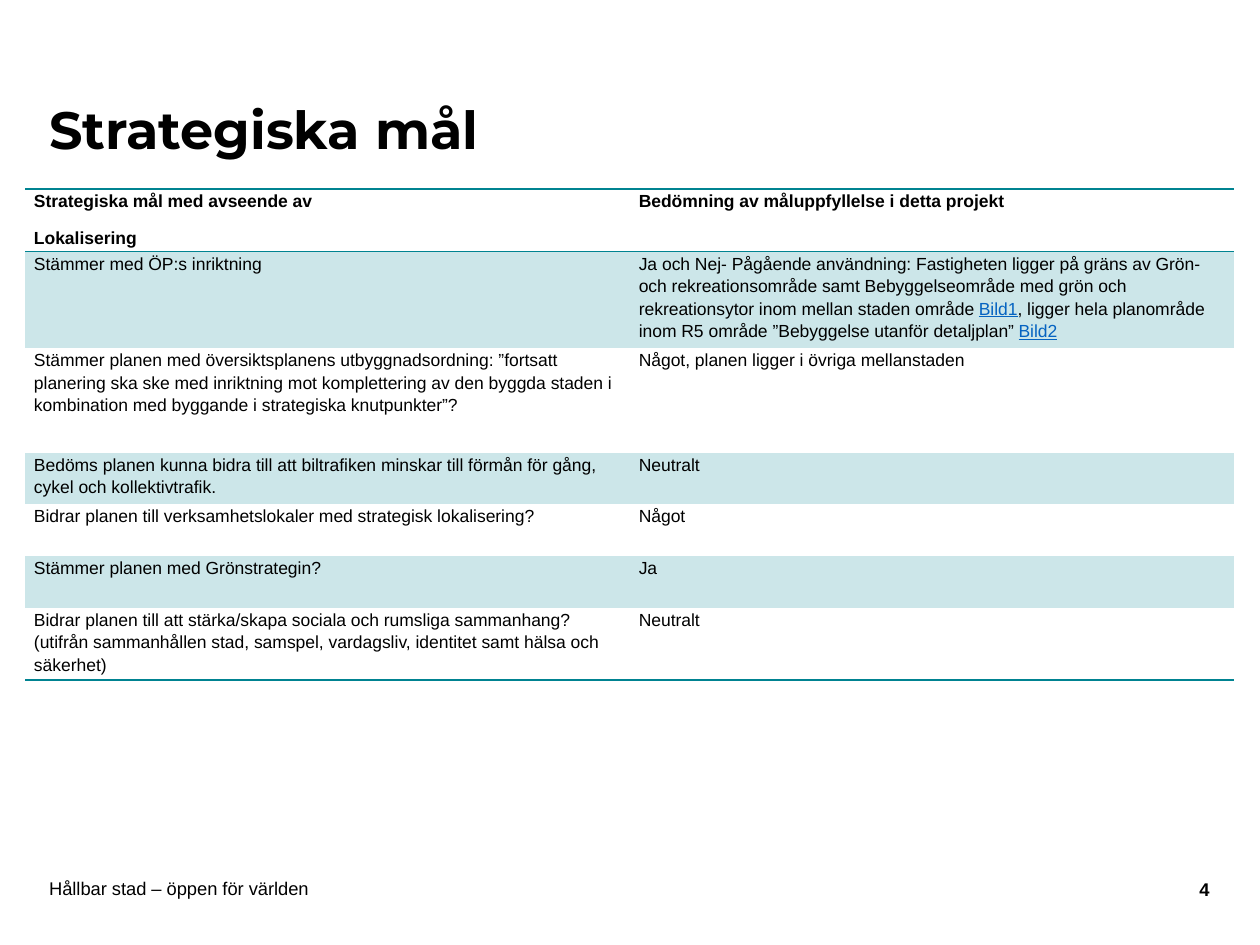
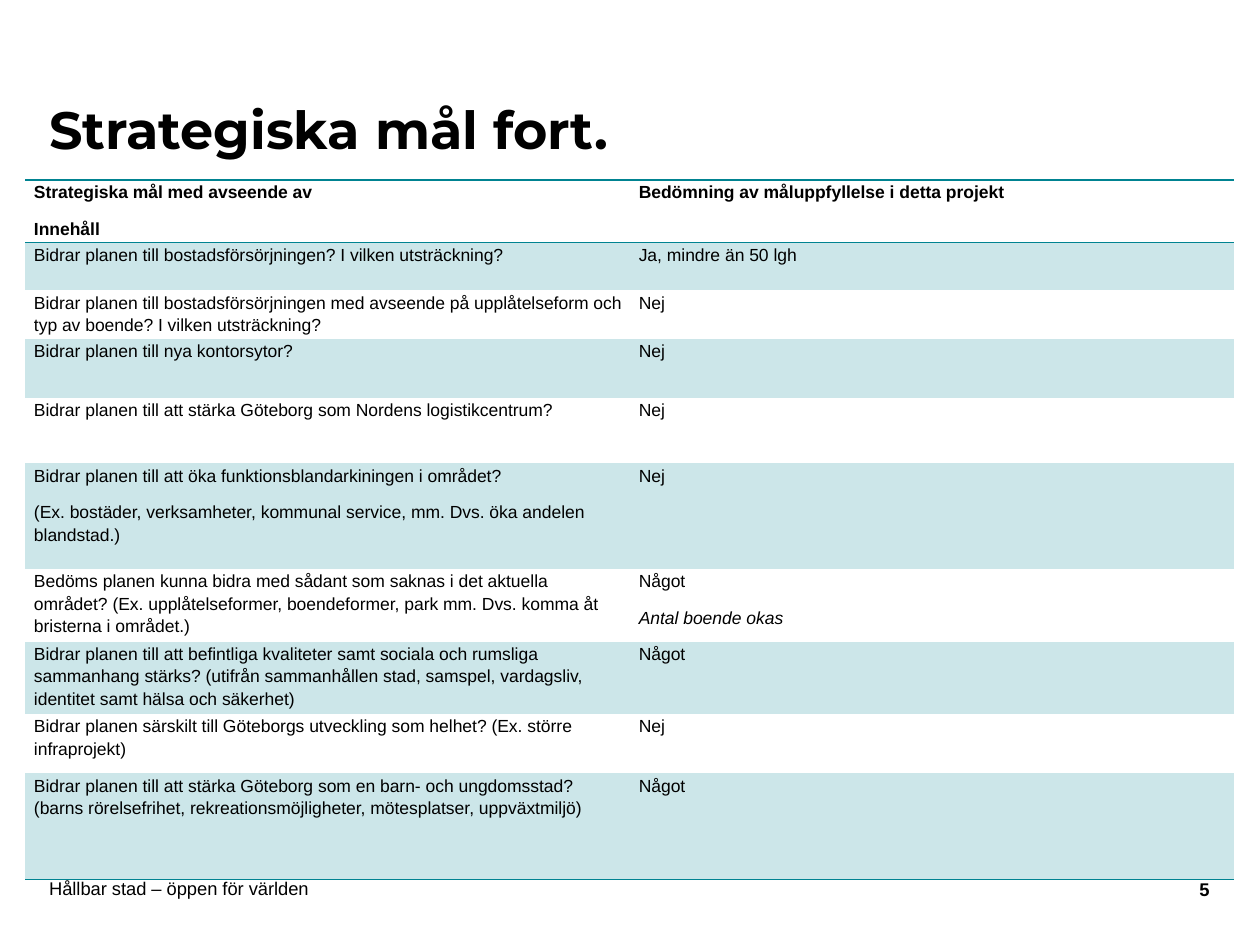
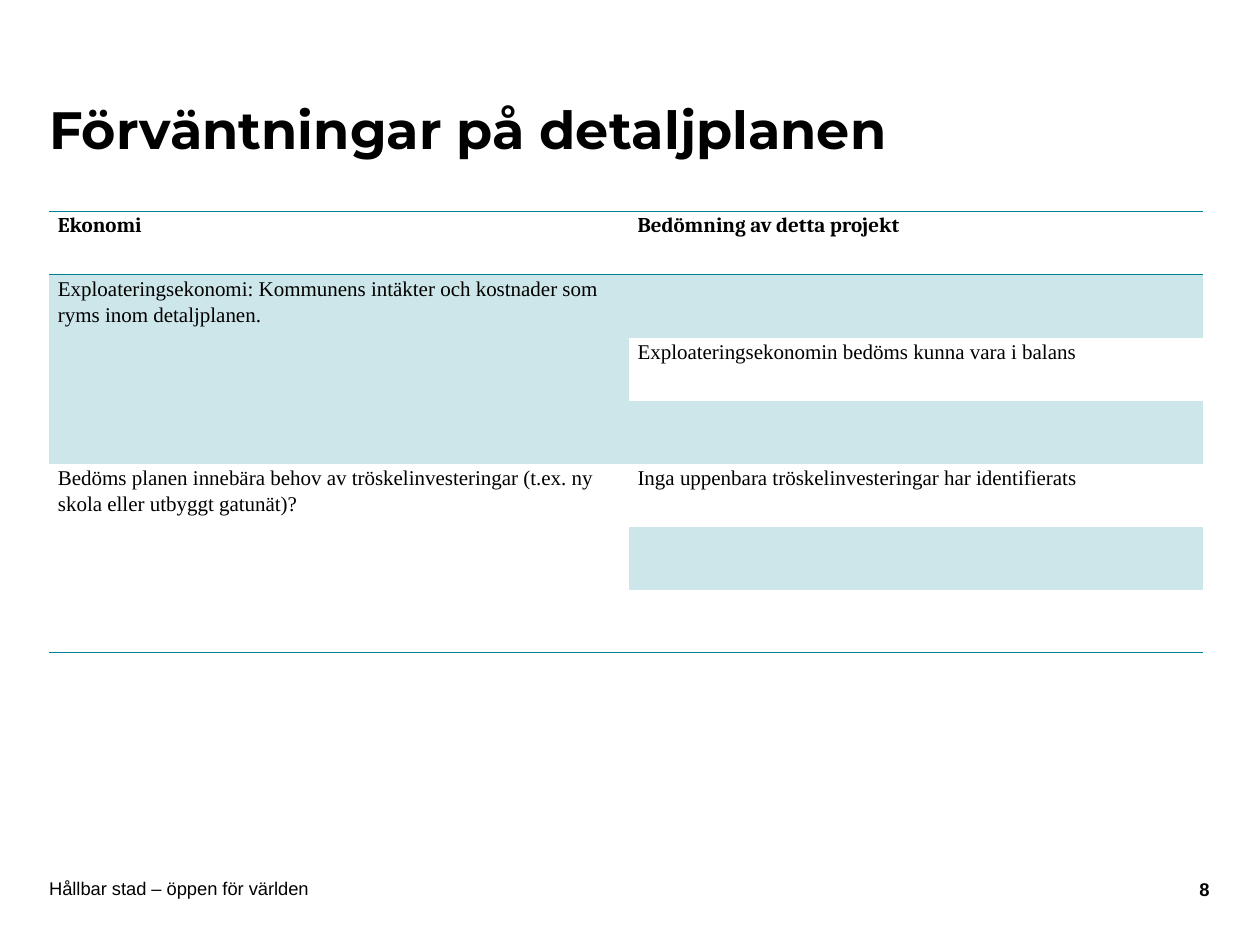
from lxml import etree
from pptx import Presentation
from pptx import util as u
from pptx.dml.color import RGBColor
from pptx.enum import text
from pptx.oxml import ns

BLACK = RGBColor(0, 0, 0)
TEAL = RGBColor(0x00, 0x83, 0x91)
PALE = RGBColor(0xCC, 0xE6, 0xE9)
BLUE = RGBColor(0x05, 0x63, 0xC1)
PLAIN = "{2D5ABB26-0587-4C30-8999-92F81FD0307C}"
MOTTO = "Hållbar stad – öppen för världen"
HEAD = "Bedömning av måluppfyllelse i detta projekt"
GOALS = {"face": "Arial", "bold": "Arial", "size": 10, "lead": 1.15, "after": 8}
COSTS = {"face": "Times New Roman", "bold": "Cambria", "size": 12,
         "lead": u.Pt(15), "after": 6}

PLACE = [
    ("Strategiska mål med avseende av\nLokalisering", HEAD),
    ("Stämmer med ÖP:s inriktning",
     "Ja och Nej- Pågående användning: Fastigheten ligger på gräns av Grön- och "
     "rekreationsområde samt Bebyggelseområde med grön och rekreationsytor inom "
     "mellan staden område |Bild1|, ligger hela planområde inom R5 område "
     "”Bebyggelse utanför detaljplan” |Bild2"),
    ("Stämmer planen med översiktsplanens utbyggnadsordning: ”fortsatt planering "
     "ska ske med inriktning mot komplettering av den byggda staden i kombination "
     "med byggande i strategiska knutpunkter”?",
     "Något, planen ligger i övriga mellanstaden"),
    ("Bedöms planen kunna bidra till att biltrafiken minskar till förmån för gång, "
     "cykel och kollektivtrafik.", "Neutralt"),
    ("Bidrar planen till verksamhetslokaler med strategisk lokalisering?", "Något"),
    ("Stämmer planen med Grönstrategin?", "Ja"),
    ("Bidrar planen till att stärka/skapa sociala och rumsliga sammanhang? "
     "(utifrån sammanhållen stad, samspel, vardagsliv, identitet samt hälsa och "
     "säkerhet)", "Neutralt"),
]
SCOPE = [
    ("Strategiska mål med avseende av\nInnehåll", HEAD),
    ("Bidrar planen till bostadsförsörjningen? I vilken utsträckning?",
     "Ja, mindre än 50 lgh"),
    ("Bidrar planen till bostadsförsörjningen med avseende på upplåtelseform och "
     "typ av boende? I vilken utsträckning?", "Nej"),
    ("Bidrar planen till nya kontorsytor?", "Nej"),
    ("Bidrar planen till att stärka Göteborg som Nordens logistikcentrum?", "Nej"),
    ("Bidrar planen till att öka funktionsblandarkiningen i området?\n"
     "(Ex. bostäder, verksamheter, kommunal service, mm. Dvs. öka andelen "
     "blandstad.)", "Nej"),
    ("Bedöms planen kunna bidra med sådant som saknas i det aktuella området? "
     "(Ex. upplåtelseformer, boendeformer, park mm. Dvs. komma åt bristerna i "
     "området.)", "Något\nAntal boende okas"),
    ("Bidrar planen till att befintliga kvaliteter samt sociala och rumsliga "
     "sammanhang stärks? (utifrån sammanhållen stad, samspel, vardagsliv, "
     "identitet samt hälsa och säkerhet)", "Något"),
    ("Bidrar planen särskilt till Göteborgs utveckling som helhet? (Ex. större "
     "infraprojekt)", "Nej"),
    ("Bidrar planen till att stärka Göteborg som en barn- och ungdomsstad? (barns "
     "rörelsefrihet, rekreationsmöjligheter, mötesplatser, uppväxtmiljö)", "Något"),
]
MONEY = [
    ("Ekonomi", "Bedömning av detta projekt"),
    ("Exploateringsekonomi: Kommunens intäkter och kostnader som ryms inom "
     "detaljplanen.", ""),
    (None, "Exploateringsekonomin bedöms kunna vara i balans"),
    (None, ""),
    ("Bedöms planen innebära behov av tröskelinvesteringar (t.ex. ny skola eller "
     "utbyggt gatunät)?", "Inga uppenbara tröskelinvesteringar har identifierats"),
    (None, ""),
    (None, ""),
]


def style(run, face, size, bold=False, color=BLACK):
    """Set the font of a run."""
    font = run.font
    font.name, font.size, font.bold = face, u.Pt(size), bold
    font.color.rgb = color


def label(slide, words, box, face, size, bold=False, pad=0, side=None):
    """Add a line of text centred vertically in its box."""
    frame = slide.shapes.add_textbox(*map(u.Inches, box)).text_frame
    frame.word_wrap = True
    frame.vertical_anchor = text.MSO_ANCHOR.MIDDLE
    frame.margin_left = frame.margin_right = 0
    frame.margin_top = frame.margin_bottom = u.Inches(pad)
    frame.text = words
    para = frame.paragraphs[0]
    para.alignment = side
    style(para.runs[0], face, size, bold)
    return para


def page(deck, title, number):
    """Add a slide with its title, motto and page number."""
    slide = deck.slides.add_slide(deck.slide_layouts[6])
    label(slide, number, (9.12, 6.98, 0.48, 0.16), "Arial", 10.5, True,
          side=text.PP_ALIGN.RIGHT)
    label(slide, MOTTO, (0.39, 6.97, 7.09, 0.16), "Arial", 10.5)
    para = label(slide, title, (0.39, 0.42, 7.52, 1.26), "Montserrat", 30, True, 0.05)
    para.line_spacing = 0.9
    return slide


def rule(cell, edge):
    """Draw a teal line along an edge of a cell."""
    line = etree.SubElement(cell._tc.get_or_add_tcPr(), ns.qn("a:" + edge),
                            w=str(u.Pt(1)))
    fill = etree.SubElement(line, ns.qn("a:solidFill"))
    etree.SubElement(fill, ns.qn("a:srgbClr"), val=str(TEAL))


def write(cell, words, look, head):
    """Fill a cell with paragraphs, where every second part between bars is a link."""
    frame = cell.text_frame
    frame.text = words.replace("|", "")
    for para, line in zip(frame.paragraphs, words.split("\n")):
        para.line_spacing = look["lead"]
        para.space_after = u.Pt(look["after"])
        parts = line.split("|")
        if len(parts) > 1:
            para.text = parts[0]
            for part in parts[1:]:
                para.add_run().text = part
        for spot, run in enumerate(para.runs):
            link = spot % 2 == 1
            style(run, look["bold" if head else "face"], look["size"], head,
                  BLUE if link else BLACK)
            if link:
                run.font.underline = True


def grid(slide, rows, spot, cols, highs, look):
    """Add a table with banded rows, joining a cell with the None cells below it."""
    left, top = spot
    frame = slide.shapes.add_table(len(rows), len(cols), u.Inches(left), u.Inches(top),
                                   u.Inches(sum(cols)), u.Inches(sum(highs)))
    table = frame.table
    table.first_row = table.horz_banding = False
    for mark in frame.element.iter(ns.qn("a:tableStyleId")):
        mark.text = PLAIN
    for col, wide in zip(table.columns, cols):
        col.width = u.Inches(wide)
    for row, high in zip(table.rows, highs):
        row.height = u.Inches(high)
    for i, row in enumerate(rows):
        for j, words in enumerate(row):
            cell = table.cell(i, j)
            end = i
            while end + 1 < len(rows) and rows[end + 1][j] is None:
                end += 1
            cell.margin_left = cell.margin_right = u.Inches(0.07)
            cell.margin_top = cell.margin_bottom = 0
            if i == 0:
                rule(cell, "lnT")
            if i == 0 or end == len(rows) - 1:
                rule(cell, "lnB")
            if i % 2 and words is not None:
                cell.fill.solid()
                cell.fill.fore_color.rgb = PALE
            else:
                cell.fill.background()
            if words:
                write(cell, words, look, i == 0)
            if words is not None and end > i:
                cell.merge(table.cell(end, j))
    return table


def main():
    """Build the three slides and save them."""
    deck = Presentation()
    deck.slide_width, deck.slide_height = u.Inches(10), u.Inches(7.5)
    wide = (4.8, 4.79)
    slide = page(deck, "Strategiska mål", "4")
    grid(slide, PLACE, (0.2, 1.5), wide,
         (0.46, 0.71, 0.83, 0.41, 0.41, 0.41, 0.53), GOALS)
    slide = page(deck, "Strategiska mål fort.", "5")
    table = grid(slide, SCOPE, (0.2, 1.43), wide,
                 (0.47, 0.38, 0.38, 0.47, 0.52, 0.84, 0.55, 0.55, 0.47, 0.84), GOALS)
    note = table.cell(6, 1).text_frame.paragraphs[1]
    note.runs[0].font.italic = True
    slide = page(deck, "Förväntningar på detaljplanen", "8")
    grid(slide, MONEY, (0.39, 1.68), (4.6, 4.56), [0.5] * len(MONEY), COSTS)
    deck.save("out.pptx")


if __name__ == "__main__":
    main()
